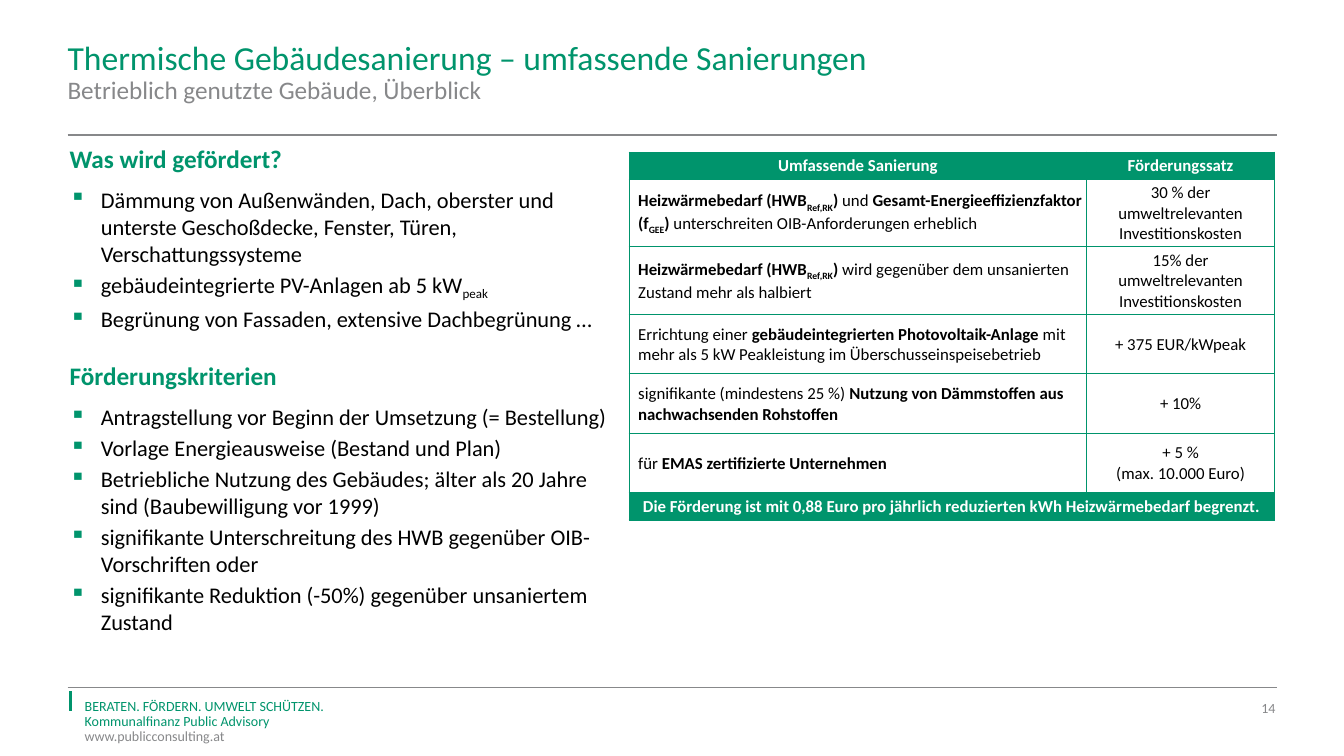
from lxml import etree
from pptx import Presentation
from pptx import util as u
from pptx.dml.color import RGBColor
from pptx.enum import shapes, text
from pptx.oxml.ns import qn

PX = 9144  # 100 px to the inch
GREEN, GRAY, BLACK, WHITE = "00946C", "87888A", "000000", "FFFFFF"
LEFT, MID, RIGHT = text.PP_ALIGN.LEFT, text.PP_ALIGN.CENTER, text.PP_ALIGN.RIGHT


def paint(hue):
    return RGBColor.from_string(hue)


def write(frame, words, size=12, hue=BLACK, bold=False, align=LEFT,
          before=0, after=0, lead=1.0, bullet=False):
    """One paragraph per line; *...* is bold and _..._ is subscript."""
    for line in words.split("\n"):
        para = frame.paragraphs[0]
        if para.runs:
            para = frame.add_paragraph()
        if bullet:
            props = para._p.get_or_add_pPr()
            props.set("marL", str(31 * PX))
            props.set("indent", str(-31 * PX))
            tint = etree.SubElement(props, qn("a:buClr"))
            etree.SubElement(tint, qn("a:srgbClr"), val=GREEN)
            etree.SubElement(props, qn("a:buChar"), char="▪")
        para.alignment = align
        para.line_spacing = lead
        para.space_before, para.space_after = u.Pt(before), u.Pt(after)
        for i, part in enumerate(line.split("*")):
            for j, bit in enumerate(part.split("_")):
                if not bit:
                    continue
                run = para.add_run()
                run.text = bit
                font = run.font
                font.name, font.size = "Calibri", u.Pt(size)
                font.bold = bold or i % 2 == 1
                font.color.rgb = paint(hue)
                if j % 2:
                    run._r.get_or_add_rPr().set("baseline", "-25000")


deck = Presentation()
deck.slide_width, deck.slide_height = 1333 * PX, 750 * PX
slide = deck.slides.add_slide(deck.slide_layouts[6])

# Rules and footer bar
for x1, y1, x2, y2, hue, wide in [
    (67, 682, 1267, 682, GRAY, 1),
    (67, 134, 1267, 134, GRAY, 1),
    (70, 686, 70, 705, GREEN, 2),
]:
    rule = slide.shapes.add_connector(
        shapes.MSO_CONNECTOR.STRAIGHT, x1 * PX, y1 * PX, x2 * PX, y2 * PX)
    rule.line.color.rgb = paint(hue)
    rule.line.width = u.Pt(wide)
    etree.SubElement(rule._element.spPr, qn("a:effectLst"))

# Text boxes
frames = []
for x, y, w, h in [
    (67, 37, 915, 40),
    (67, 74, 915, 30),
    (84, 694, 241, 45),
    (1238, 694, 27, 17),
    (69, 142, 539, 489),
]:
    frame = slide.shapes.add_textbox(x * PX, y * PX, w * PX, h * PX).text_frame
    frame.margin_left = frame.margin_right = 0
    frame.margin_top = frame.margin_bottom = 0
    frame.word_wrap = True
    frames.append(frame)
title, sub, foot, page, body = frames

write(title, "Thermische Gebäudesanierung – umfassende Sanierungen", size=24, hue=GREEN)
write(sub, "Betrieblich genutzte Gebäude, Überblick", size=18, hue=GRAY)
write(foot, "BERATEN. FÖRDERN. UMWELT SCHÜTZEN.\nKommunalfinanz Public Advisory",
      size=10, hue=GREEN, lead=0.9)
write(foot, "www.publicconsulting.at", size=10, hue=GRAY, lead=0.9)
write(page, "14", size=10, hue=GRAY, align=RIGHT)

# Left column: headings with bullets
for gap, head, items in [
    (0, "Was wird gefördert?", [
        "Dämmung von Außenwänden, Dach, oberster und unterste Geschoßdecke, "
        "Fenster, Türen, Verschattungssysteme",
        "gebäudeintegrierte PV-Anlagen ab 5 kW_peak_",
        "Begrünung von Fassaden, extensive Dachbegrünung …",
    ]),
    (20, "Förderungskriterien", [
        "Antragstellung vor Beginn der Umsetzung (= Bestellung)",
        "Vorlage Energieausweise (Bestand und Plan)",
        "Betriebliche Nutzung des Gebäudes; älter als 20 Jahre sind "
        "(Baubewilligung vor 1999)",
        "signifikante Unterschreitung des HWB gegenüber OIB-Vorschriften oder",
        "signifikante Reduktion (-50%) gegenüber unsaniertem Zustand",
    ]),
]:
    write(body, head, size=18, hue=GREEN, bold=True, before=gap, after=6)
    write(body, "\n".join(items), size=16, before=3, bullet=True)

# Funding table
rows = [
    ("Umfassende Sanierung", "Förderungssatz"),
    ("*Heizwärmebedarf (HWB_Ref,RK_)* und *Gesamt-Energieeffizienzfaktor "
     "(f_GEE_)* unterschreiten OIB-Anforderungen erheblich",
     "30 % der\numweltrelevanten Investitionskosten"),
    ("*Heizwärmebedarf (HWB_Ref,RK_)* wird gegenüber dem unsanierten "
     "Zustand mehr als halbiert",
     "15% der\numweltrelevanten Investitionskosten"),
    ("Errichtung einer *gebäudeintegrierten Photovoltaik-Anlage* mit mehr als "
     "5 kW Peakleistung im Überschusseinspeisebetrieb", "+ 375 EUR/kWpeak"),
    ("signifikante (mindestens 25 %) *Nutzung von Dämmstoffen aus "
     "nachwachsenden Rohstoffen*", "+ 10%"),
    ("für *EMAS zertifizierte Unternehmen*", "+ 5 %\n(max. 10.000 Euro)"),
    ("Die Förderung ist mit 0,88 Euro pro jährlich reduzierten kWh "
     "Heizwärmebedarf begrenzt.", ""),
]
tall = [27, 67, 67, 59, 59, 59, 27]
grid = slide.shapes.add_table(
    len(rows), 2, 624 * PX, 151 * PX, 640 * PX, sum(tall) * PX).table
for col, wide in zip(grid.columns, (454, 186)):
    col.width = wide * PX
grid.cell(6, 0).merge(grid.cell(6, 1))

for r, row in enumerate(rows):
    grid.rows[r].height = tall[r] * PX
    band = r in (0, len(rows) - 1)
    for c, words in enumerate(row):
        cell = grid.cell(r, c)
        cell.vertical_anchor = text.MSO_ANCHOR.MIDDLE
        cell.margin_left = (1 if band or c else 9) * PX
        cell.margin_right = cell.margin_top = PX
        cell.margin_bottom = 0
        if band:
            cell.fill.solid()
            cell.fill.fore_color.rgb = paint(GREEN)
        else:
            cell.fill.background()
        props = cell._tc.get_or_add_tcPr()
        for n, side in enumerate("LRTB"):
            edge = etree.Element(qn("a:ln" + side), w="12700")
            fill = etree.SubElement(edge, qn("a:solidFill"))
            etree.SubElement(fill, qn("a:srgbClr"), val=GREEN)
            props.insert(n, edge)
        if words:
            write(cell.text_frame, words, bold=band, hue=WHITE if band else BLACK,
                  align=MID if band or c else LEFT)

deck.save("out.pptx")
